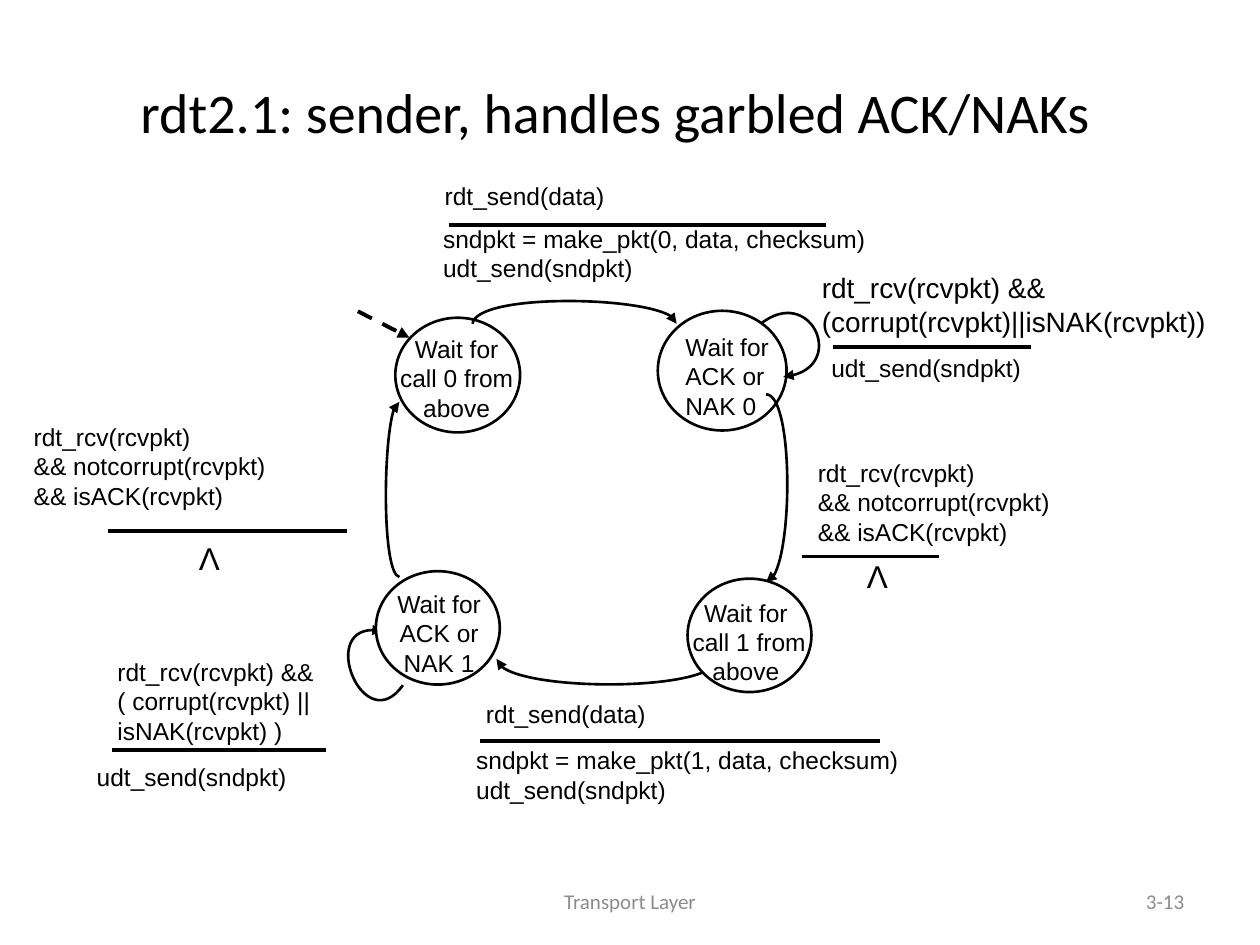
import math

import lxml.etree
import pptx
import pptx.util
import pptx.dml.color
import pptx.enum.dml
import pptx.enum.shapes
import pptx.enum.text
import pptx.oxml.ns

Pt = pptx.util.Pt
ALIGN = pptx.enum.text.PP_ALIGN
ANCHOR = pptx.enum.text.MSO_ANCHOR
COLORS = {"ink": "000000", "paper": "FFFFFF", "footer": "8C8C8C"}

STATES = {
    "call 0": ((225.9, 181.6, 71.3, 65.5), "Wait for call 0 from above",
               (218.1, 187.2, 85.7, 48.2), ALIGN.CENTER),
    "ACK 0": ((375.9, 177.6, 73.6, 68.4), "Wait for ACK or NAK 0",
              (384.5, 186.1, 85.7, 51.1), ALIGN.LEFT),
    "call 1": ((392.9, 330.7, 70.8, 64.8), "Wait for\n call 1 from above",
               (382.3, 338, 87.8, 48.2), ALIGN.CENTER),
    "ACK 1": ((214.8, 326.4, 70.8, 64.8), "Wait for ACK or NAK 1",
              (209.9, 333.1, 82.1, 48.2), ALIGN.CENTER),
}

ARCS = [
    ([(231.12, 391.68), (209.52, 422.64), (180, 353.52), (219.6, 360.72)],
     243.5, (208.8, 380.52), "tailEnd"),
    ([(270, 185.04), (272.16, 167.76), (386.64, 169.2), (386.64, 185.04)],
     0, (328.32, 176.4), "tailEnd"),
    ([(434.88, 185.04), (462.96, 162.72), (486, 211.68), (447.84, 215.28)],
     337.4, (458.28, 193.32), "tailEnd"),
    ([(228.24, 329.76), (218.16, 327.6), (218.88, 229.68), (228.24, 229.68)],
     270, (223.2, 279.72), "tailEnd"),
    ([(283.68, 376.56), (285.84, 396), (409.68, 394.56), (409.68, 376.56)],
     0, (346.68, 386.28), "headEnd"),
    ([(437.04, 332.64), (452.88, 330.48), (452.16, 225.36), (437.04, 225.36)],
     90, (445.32, 278.64), "headEnd"),
]

RECEIVED_ACK = "rdt_rcv(rcvpkt)\n&& notcorrupt(rcvpkt)\n&& isACK(rcvpkt)"
RESEND = "udt_send(sndpkt)"
SEND = "sndpkt = make_pkt({}, data, checksum)\nudt_send(sndpkt)"
LAMBDA = {"size": 18, "wrap": False}

TRANSITIONS = [
    ("rdt_send(data)", (247, 99.7, 214.6, 23.8), {}, (256.5, 471.9, 128.4),
     SEND.format(0), (246.1, 124.3, 336.2, 31.7), {}),
    ("rdt_rcv(rcvpkt) &&\n(corrupt(rcvpkt)||isNAK(rcvpkt))",
     (462.6, 151.2, 257, 44.6), {"size": 16}, (476, 589, 198.1),
     RESEND, (468, 198, 177.8, 31.7), {}),
    (RECEIVED_ACK, (460.2, 258.1, 259.9, 61.9), {}, (458.3, 536.4, 318),
     "Λ", (488.2, 314.6, 25.2, 26.6), LAMBDA),
    ("rdt_send(data)", (270.6, 396, 187.9, 22.3), {}, (274.3, 502.6, 423.4),
     SEND.format(1), (265, 422.3, 296.6, 31.7), {}),
    ("rdt_rcv(rcvpkt) &&\n( corrupt(rcvpkt) ||\nisNAK(rcvpkt) )",
     (60, 371.9, 144, 56.2), {}, (64.1, 186.5, 428.4),
     RESEND, (48.2, 432, 162, 21.6), {}),
    (RECEIVED_ACK, (12.2, 237.6, 204.5, 44.6), {}, (61.8, 198.5, 303.5),
     "Λ", (106.6, 304.6, 25.2, 26.6), LAMBDA),
]


def rgb(name):
    return pptx.dml.color.RGBColor.from_string(COLORS[name])


def add_xml(parent, tag, **attributes):
    return lxml.etree.SubElement(parent, pptx.oxml.ns.qn(tag), **attributes)


def add_text(shapes, text, place, size=14, font="Arial", color="ink",
             align=ALIGN.LEFT, anchor=ANCHOR.TOP, wrap=True):
    frame = shapes.add_textbox(*map(Pt, place)).text_frame
    frame.word_wrap = wrap
    if not wrap:
        frame.auto_size = pptx.enum.text.MSO_AUTO_SIZE.SHAPE_TO_FIT_TEXT
    frame.vertical_anchor = anchor
    frame.text = text
    for paragraph in frame.paragraphs:
        paragraph.alignment = align
        for run in paragraph.runs:
            run.font.size = Pt(size)
            run.font.name = font
            run.font.color.rgb = rgb(color)


def set_line(shape, width, arrow=None):
    shape.line.width = Pt(width)
    shape.line.color.rgb = rgb("ink")
    if arrow:
        add_xml(shape.line._get_or_add_ln(), f"a:{arrow}", type="triangle")


def add_line(shapes, start, end, dashed_arrow=False):
    line = shapes.add_connector(
        pptx.enum.shapes.MSO_CONNECTOR.STRAIGHT, *map(Pt, start + end))
    if dashed_arrow:
        line.line.dash_style = pptx.enum.dml.MSO_LINE.DASH
    set_line(line, 2.25, arrow="tailEnd" if dashed_arrow else None)
    add_xml(line._element.spPr, "a:effectLst")


def turn_back(point, center, degrees):
    angle = math.radians(-degrees)
    dx, dy = point[0] - center[0], point[1] - center[1]
    return (Pt(center[0] + dx * math.cos(angle) - dy * math.sin(angle)),
            Pt(center[1] + dx * math.sin(angle) + dy * math.cos(angle)))


def add_arc(shapes, controls, rotation, center, arrow):
    points = [turn_back(point, center, rotation) for point in controls]
    builder = shapes.build_freeform(*points[0])
    builder.add_line_segments(points[1:], close=False)
    arc = builder.convert_to_shape()
    outline = arc._element.find(".//" + pptx.oxml.ns.qn("a:path"))
    segments = list(outline)[1:]
    curve = add_xml(outline, "a:cubicBezTo")
    for segment in segments:
        curve.append(segment[0])
        outline.remove(segment)
    arc.rotation = rotation
    arc.shadow.inherit = False
    arc.fill.background()
    set_line(arc, 1.5, arrow)


def add_state(shapes, circle_place, label, label_place, align):
    circle = shapes.add_shape(
        pptx.enum.shapes.MSO_SHAPE.OVAL, *map(Pt, circle_place))
    circle.shadow.inherit = False
    circle.fill.solid()
    circle.fill.fore_color.rgb = rgb("paper")
    set_line(circle, 1.5)
    add_text(shapes, label, label_place, align=align)


def add_transition(shapes, event, event_place, event_format, rule,
                   action, action_place, action_format):
    left, right, y = rule
    add_text(shapes, event, event_place, **event_format)
    add_line(shapes, (left, y), (right, y))
    add_text(shapes, action, action_place, **action_format)


def main():
    deck = pptx.Presentation()
    deck.slide_width, deck.slide_height = Pt(720), Pt(540)
    shapes = deck.slides.add_slide(deck.slide_layouts[6]).shapes

    footer = dict(size=12, font="Calibri", color="footer", anchor=ANCHOR.MIDDLE)
    add_text(shapes, "Transport Layer", (246, 500.4, 228.2, 28.8),
             align=ALIGN.CENTER, **footer)
    add_text(shapes, "3-13", (516, 500.4, 167.8, 28.8),
             align=ALIGN.RIGHT, **footer)
    add_text(shapes, "rdt2.1: sender, handles garbled ACK/NAKs",
             (26, 18.7, 651.6, 90), size=32, font="Calibri",
             align=ALIGN.CENTER, anchor=ANCHOR.MIDDLE)

    add_state(shapes, *STATES["call 0"])
    add_line(shapes, (204.5, 177.9), (234, 193), dashed_arrow=True)
    add_state(shapes.add_group_shape().shapes, *STATES["ACK 0"])
    for arc in ARCS:
        add_arc(shapes, *arc)
    for state in ("call 1", "ACK 1"):
        add_state(shapes.add_group_shape().shapes, *STATES[state])
    for transition in TRANSITIONS:
        add_transition(shapes, *transition)

    deck.save("out.pptx")


if __name__ == "__main__":
    main()
